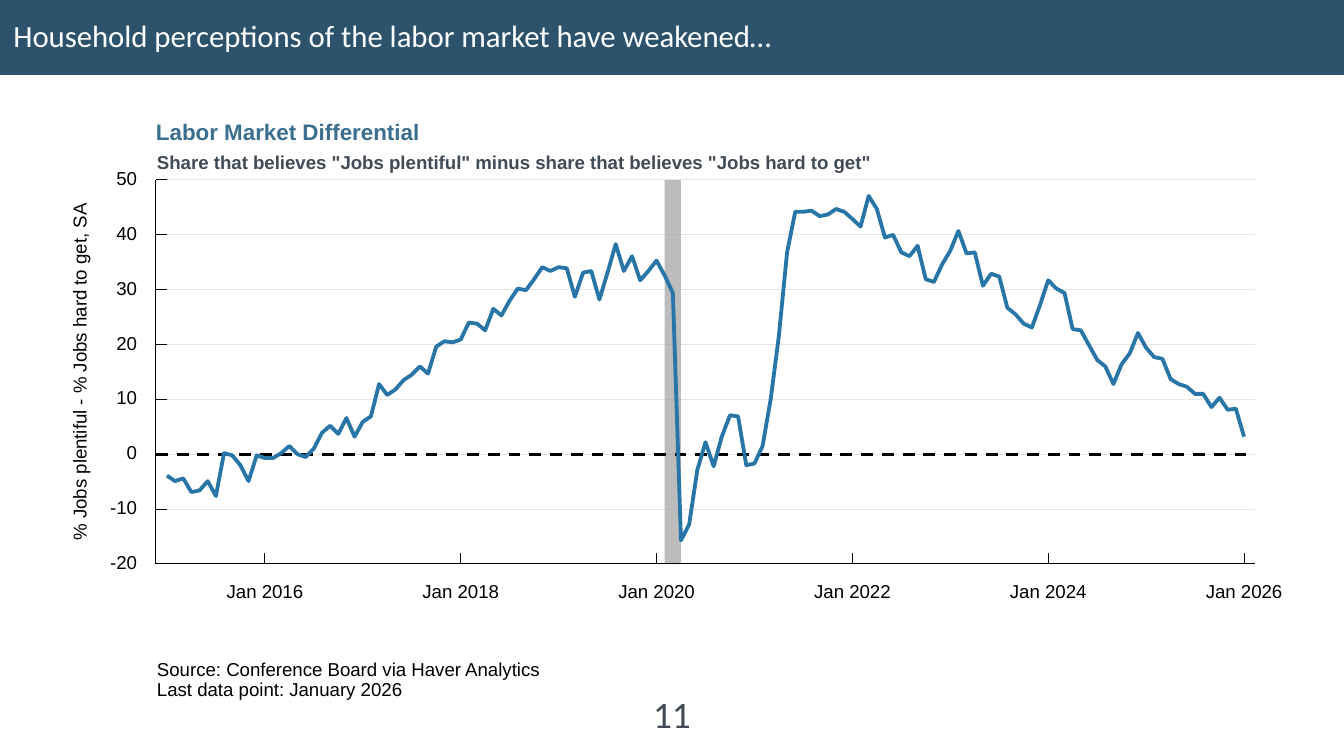
from lxml.etree import SubElement
from pptx import Presentation
from pptx.dml.color import RGBColor
from pptx.enum.dml import MSO_LINE
from pptx.enum.shapes import MSO_CONNECTOR, MSO_SHAPE
from pptx.enum.text import MSO_ANCHOR, PP_ALIGN
from pptx.oxml.ns import qn
from pptx.util import Emu, Pt

# Content
TITLE = "Household perceptions of the labor market have weakened…"
CHART_TITLE = "Labor Market Differential"
SUBTITLE = 'Share that believes "Jobs plentiful" minus share that believes "Jobs hard to get"'
AXIS_TITLE = "% Jobs plentiful - % Jobs hard to get, SA"
SOURCE = ["Source: Conference Board via Haver Analytics", "Last data point: January 2026"]
PAGE_NUMBER = "11"
FIRST_YEAR = 2015
DIFFERENTIAL = [  # one row a year, one value a month
    [-3.9, -4.9, -4.4, -6.9, -6.6, -4.9, -7.6, 0.2, -0.2, -2, -4.9, -0.2],
    [-0.7, -0.7, 0.2, 1.5, 0, -0.5, 1, 3.9, 5.2, 3.7, 6.6, 3.2],
    [5.9, 6.9, 12.8, 10.8, 11.8, 13.5, 14.5, 16, 14.7, 19.6, 20.6, 20.4],
    [20.9, 24, 23.8, 22.6, 26.5, 25.3, 28, 30.2, 29.9, 31.9, 34.1, 33.4],
    [34.1, 33.9, 28.7, 33.1, 33.4, 28.2, 33.1, 38.3, 33.4, 36.1, 31.7, 33.4],
    [35.3, 32.6, 29.4, -15.7, -12.8, -2.9, 2.2, -2.2, 3.2, 7.1, 6.9, -2],
    [-1.7, 1.5, 10.1, 21.6, 36.8, 44.2, 44.2, 44.4, 43.4, 43.7, 44.7, 44.2],
    [42.9, 41.5, 47.1, 44.7, 39.5, 40, 36.8, 36.1, 38, 31.9, 31.4, 34.6],
    [37.1, 40.7, 36.6, 36.8, 30.7, 32.9, 32.4, 26.7, 25.5, 23.8, 23.1, 27.2],
    [31.7, 30.2, 29.4, 22.8, 22.6, 19.9, 17.2, 16, 12.8, 16.4, 18.4, 22.1],
    [19.4, 17.7, 17.4, 13.7, 12.8, 12.3, 11, 11, 8.6, 10.3, 8.1, 8.3],
    [3.2],
]
VALUE_STEPS = range(-20, 51, 10)
LABELLED_YEARS = range(2016, 2027, 2)
RECESSION = ((2020, 2), (2020, 4))

THEME = {
    "banner": "2C536B", "white": "FFFFFF", "heading": "3A6F8F", "slate": "414B56",
    "black": "000000", "grid": "E5E5E5", "band": "A6A6A6", "series": "2875A8",
    "title_size": 16.5, "heading_size": 12, "text_size": 10, "page_size": 20,
    "hairline": 0.53, "zero_width": 1.6, "series_width": 2.03,
    "font": "Arial", "title_font": "Calibri",
}

# Plot geometry in px
LEFT, RIGHT, TOP, BOTTOM = 156, 1255, 180, 564
FIRST_MONTH, MONTH_STEP = 167, 8.16
TICK = 11


def px(value):
    return Emu(round(value * 914400 / 134.4))


def month_x(year, month=1):
    return FIRST_MONTH + ((year - FIRST_YEAR) * 12 + month - 1) * MONTH_STEP


def value_y(value):
    low, high = VALUE_STEPS[0], VALUE_STEPS[-1]
    return BOTTOM - (value - low) * (BOTTOM - TOP) / (high - low)


def color(name):
    return RGBColor.from_string(THEME[name])


def set_font(font, size, color_name, bold=False, family="font"):
    font.name, font.size, font.bold = THEME[family], Pt(THEME[size]), bold
    font.color.rgb = color(color_name)


def style_line(line, color_name, width):
    line.color.rgb = color(color_name)
    line.width = Pt(THEME[width])


def add_line(x1, y1, x2, y2, color_name="black", width="hairline"):
    connector = slide.shapes.add_connector(MSO_CONNECTOR.STRAIGHT, *map(px, (x1, y1, x2, y2)))
    style_line(connector.line, color_name, width)
    SubElement(connector._element.spPr, qn("a:effectLst"))
    return connector


def add_text(box, lines, size="text_size", color_name="black", bold=False,
             align=PP_ALIGN.LEFT, family="font", spacing=None):
    shape = slide.shapes.add_textbox(*map(px, box))
    frame = shape.text_frame
    frame.word_wrap, frame.vertical_anchor = True, MSO_ANCHOR.MIDDLE
    frame.margin_left = frame.margin_right = frame.margin_top = frame.margin_bottom = 0
    frame.text = "\n".join(lines)
    for paragraph in frame.paragraphs:
        paragraph.alignment = align
        paragraph.line_spacing = Pt(spacing or THEME[size])
        set_font(paragraph.font, size, color_name, bold, family)
    return shape


presentation = Presentation()
presentation.slide_width, presentation.slide_height = px(1344), px(756)
slide = presentation.slides.add_slide(presentation.slide_layouts[5])

# Title banner
title = slide.shapes.title
title.left, title.top, title.width, title.height = map(px, (0, 0, 1344, 75))
title.fill.solid()
title.fill.fore_color.rgb = color("banner")
title.text_frame.text = TITLE
title.text_frame.vertical_anchor = MSO_ANCHOR.MIDDLE
heading = title.text_frame.paragraphs[0]
heading.alignment, heading.line_spacing = PP_ALIGN.LEFT, 0.9
set_font(heading.font, "title_size", "white", family="title_font")

# Gridlines
for value in VALUE_STEPS:
    add_line(LEFT, value_y(value), RIGHT, value_y(value), "grid")

# Recession band
start, end = (month_x(*date) for date in RECESSION)
band = slide.shapes.add_shape(MSO_SHAPE.RECTANGLE, *map(px, (start, TOP, end - start, BOTTOM - TOP)))
band.shadow.inherit = False
band.fill.solid()
band.fill.fore_color.rgb = color("band")
band.line.fill.background()
SubElement(band._element.spPr.find(".//" + qn("a:srgbClr")), qn("a:alpha"), val="75000")

# Zero line
zero_line = add_line(LEFT, value_y(0), RIGHT, value_y(0), width="zero_width")
zero_line.line.dash_style = MSO_LINE.DASH

# Value axis
add_line(LEFT, BOTTOM, LEFT, TOP)
for value in VALUE_STEPS:
    y = value_y(value)
    add_line(LEFT, y, LEFT + TICK, y)
    add_text((97, y - 7, 40, 14), [str(value)], align=PP_ALIGN.RIGHT)

# Date axis
add_line(LEFT, BOTTOM, RIGHT, BOTTOM)
for year in LABELLED_YEARS:
    x = month_x(year)
    add_line(x, BOTTOM - TICK, x, BOTTOM)
    add_text((x - 50, 586, 100, 14), [f"Jan {year}"], align=PP_ALIGN.CENTER)

# Chart headings, axis title and source
axis_title = add_text((-99, 365, 360, 14), [AXIS_TITLE], align=PP_ALIGN.CENTER)
axis_title.rotation = 270
add_text((157, 157, 800, 14), [SUBTITLE], color_name="slate", bold=True)
add_text((156, 126, 400, 16), [CHART_TITLE], "heading_size", "heading", True)
add_text((157, 660, 500, 40), SOURCE, spacing=10.8)

# Differential line
points = [(px(month_x(FIRST_YEAR + row, month)), px(value_y(value)))
          for row, values in enumerate(DIFFERENTIAL)
          for month, value in enumerate(values, 1)]
builder = slide.shapes.build_freeform(*points[0])
builder.add_line_segments(points[1:], close=False)
differential = builder.convert_to_shape()
differential.shadow.inherit = False
differential.fill.background()
style_line(differential.line, "series", "series_width")

# Page number
add_text((649, 694, 46, 40), [PAGE_NUMBER], "page_size", "slate",
         align=PP_ALIGN.CENTER, family="title_font", spacing=24)

presentation.save("out.pptx")
